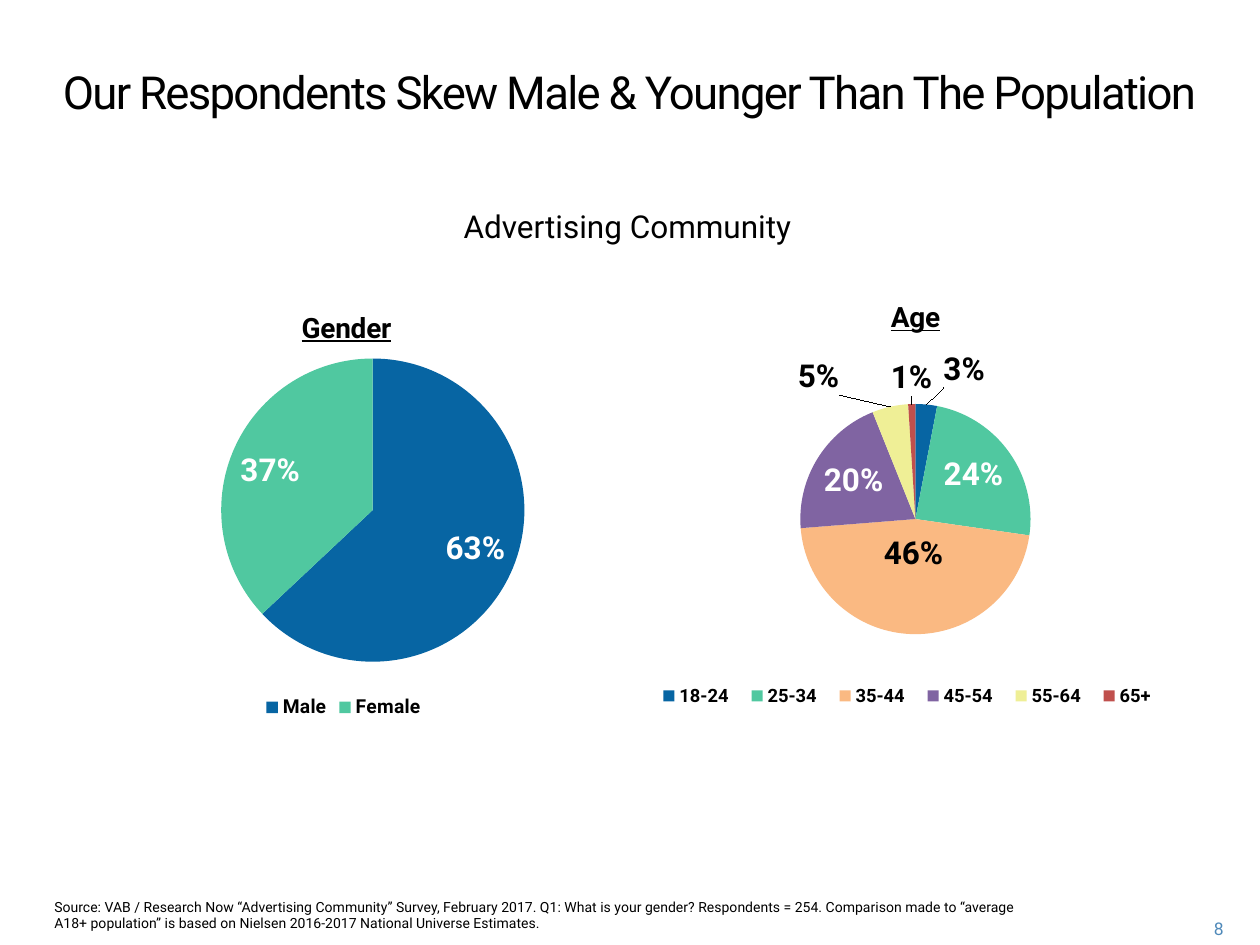
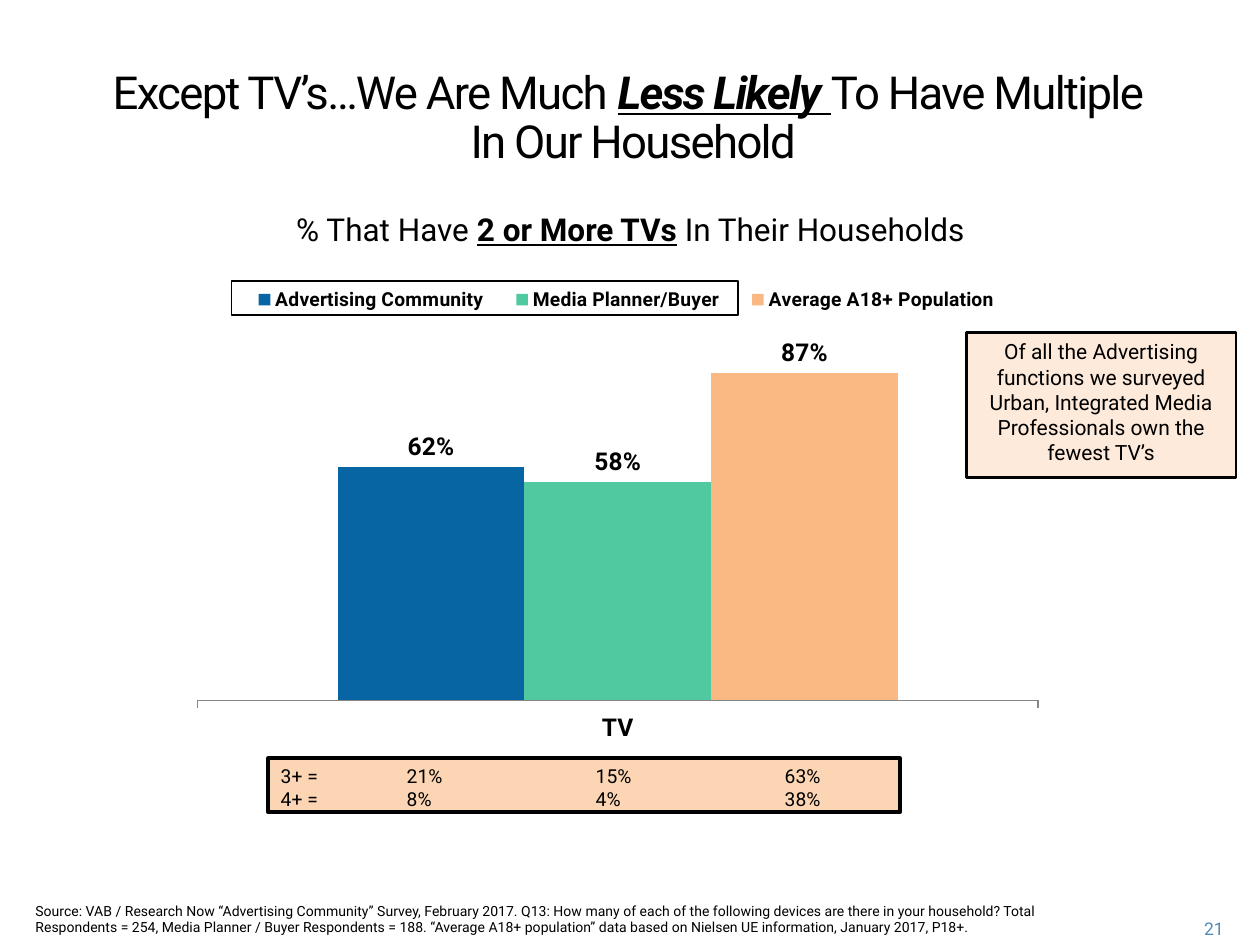
from pptx import Presentation
from pptx.chart.data import CategoryChartData
from pptx.dml.color import RGBColor
from pptx.enum import chart as charts, shapes, text
from pptx.oxml import parse_xml
from pptx.oxml.ns import nsdecls, qn
from pptx.util import Cm, Pt

FONT = "Roboto"
BLACK = RGBColor(0x00, 0x00, 0x00)
WHITE = RGBColor(0xFF, 0xFF, 0xFF)
BLUE = RGBColor(0x07, 0x65, 0xA3)
GREEN = RGBColor(0x50, 0xC8, 0xA0)
ORANGE = RGBColor(0xFA, 0xB9, 0x82)
PURPLE = RGBColor(0x80, 0x64, 0xA2)
YELLOW = RGBColor(0xEF, 0xEF, 0x96)
RED = RGBColor(0xC0, 0x50, 0x4D)
PALE_ORANGE = RGBColor(0xFD, 0xEA, 0xDA)
LIGHT_ORANGE = RGBColor(0xFC, 0xD5, 0xB5)
PAGE_BLUE = RGBColor(0x50, 0x8A, 0xBA)
AXIS_GREY = RGBColor(0x86, 0x86, 0x86)
PALETTE = [BLUE, GREEN, ORANGE, PURPLE, YELLOW, RED]

LEFT, CENTER, RIGHT = text.PP_ALIGN.LEFT, text.PP_ALIGN.CENTER, text.PP_ALIGN.RIGHT
TOP, MIDDLE = text.MSO_ANCHOR.TOP, text.MSO_ANCHOR.MIDDLE


def write(shape, box, size, runs, align=LEFT, anchor=TOP, color=BLACK):
    """Place a shape and fill its first paragraph; runs are (text, emphasised) pairs, None breaks the line."""
    shape.left, shape.top, shape.width, shape.height = [Cm(length) for length in box]
    frame = shape.text_frame
    frame.word_wrap = True
    frame.auto_size = text.MSO_AUTO_SIZE.NONE
    frame.vertical_anchor = anchor
    paragraph = frame.paragraphs[0]
    paragraph.alignment = align
    paragraph.space_before = Pt(0)
    font = paragraph.font
    font.name, font.size, font.bold = FONT, Pt(size), False
    font.color.rgb = color
    for part in runs:
        if part is None:
            paragraph.add_line_break()
            continue
        run = paragraph.add_run()
        run.text, emphasised = part
        if emphasised:
            run.font.bold = run.font.underline = True
    return paragraph


def set_layout(parent, index, mode="edge", **fractions):
    """Give a chart part a manual layout, inserted as child number index."""
    for old in parent.findall(qn("c:layout")):
        parent.remove(old)
    items = '<c:layoutTarget val="inner"/>' if parent.tag == qn("c:plotArea") else ""
    if mode == "edge":
        items += '<c:xMode val="edge"/><c:yMode val="edge"/>'
    items += "".join(f'<c:{name} val="{value}"/>' for name, value in fractions.items())
    parent.insert(index, parse_xml(
        f'<c:layout {nsdecls("c")}><c:manualLayout>{items}</c:manualLayout></c:layout>'))


presentation = Presentation()
presentation.slide_width, presentation.slide_height = Cm(25.4), Cm(19.05)
comparison_layout = presentation.slide_layouts[4]

pages = [
    dict(
        number="8",
        title=[("Our Respondents Skew Male & Younger Than The Population", False)],
        title_box=(0.46, 1.27, 24.46, 1.5),
        subtitle=[("Advertising Community", False)],
        subtitle_box=(0.46, 4.04, 24.38, 1.02),
        source="Source: VAB / Research Now “Advertising Community” Survey, February 2017. "
               "Q1: What is your gender? Respondents = 254. Comparison made to “average A18+ "
               "population” is based on Nielsen 2016-2017 National Universe Estimates.",
        source_box=(0.84, 17.98, 20.4, 0.66),
    ),
    dict(
        number="21",
        title=[("Except TV’s…We Are Much ", False), ("Less Likely ", True),
               ("To Have Multiple ", False), None, ("In Our Household", False)],
        title_box=(0.08, 1.27, 25.37, 3.56),
        subtitle=[("% That Have ", False), ("2 or More TVs", True),
                  (" In Their Households", False)],
        subtitle_box=(0.48, 4.11, 24.46, 1.02),
        source="Source: VAB / Research Now “Advertising Community” Survey, February 2017. "
               "Q13: How many of each of the following devices are there in your household? "
               "Total Respondents = 254, Media Planner / Buyer Respondents = 188. “Average A18+ "
               "population” data based on Nielsen UE information, January 2017, P18+.",
        source_box=(0.46, 18.06, 20.83, 0.99),
    ),
]

# Title, subtitle, source and page number of every slide
for page in pages:
    slide = presentation.slides.add_slide(comparison_layout)
    holders = {holder.placeholder_format.idx: holder for holder in slide.placeholders}
    title = write(holders[0], page["title_box"], 26, page["title"], CENTER)
    title.line_spacing = Pt(28)
    for run in title.runs:
        run._r.get_or_add_rPr().set("spc", "-100")
        if run.font.bold:
            run.font.italic = True
    write(holders[1], page["subtitle_box"], 18, page["subtitle"], CENTER, MIDDLE)
    write(holders[3], page["source_box"], 8, [(page["source"], False)])
    for unused in (holders[2], holders[4]):
        unused._element.getparent().remove(unused._element)
    page_number = slide.shapes.add_textbox(0, 0, 0, 0)
    write(page_number, (23.37, 18.39, 1.55, 0.64), 10, [(page["number"], False)],
          RIGHT, MIDDLE, PAGE_BLUE)

respondents_slide, households_slide = presentation.slides

# Pie charts; moved labels are point: (position, x shift, y shift)
OUTSIDE = charts.XL_LABEL_POSITION.OUTSIDE_END
pies = [
    dict(title="Gender", box=(1.02, 5.61, 11.81, 8.99), legend_size=11,
         shares={"Male": 0.63, "Female": 0.37},
         plot=dict(x=0.29, y=0.18, w=0.52, h=0.68),
         title_place=dict(x=0.42, y=0.06), legend_place=None, moved_labels={}),
    dict(title="Age", box=(12.93, 5.61, 11.05, 9.25), legend_size=10.5,
         shares={"18-24": 0.03, "25-34": 0.24, "35-44": 0.46,
                 "45-54": 0.2, "55-64": 0.05, "65+": 0.01},
         plot=dict(x=0.29, y=0.27, w=0.42, h=0.51),
         title_place=None, legend_place=dict(x=0.01, y=0.88, w=0.95, h=0.06),
         moved_labels={0: (OUTSIDE, 0.03, -0.02),
                       2: (charts.XL_LABEL_POSITION.CENTER, 0, -0.05),
                       4: (OUTSIDE, -0.09, -0.01),
                       5: (OUTSIDE, 0, 0)}),
]
for pie in pies:
    data = CategoryChartData(number_format="0%")
    data.categories = list(pie["shares"])
    data.add_series("Series 1", list(pie["shares"].values()))
    chart = respondents_slide.shapes.add_chart(
        charts.XL_CHART_TYPE.PIE, *[Cm(length) for length in pie["box"]], data).chart
    chart.font.name, chart.font.size = FONT, Pt(18)
    chart.font.color.rgb = BLACK

    chart.has_title = True
    chart.chart_title.include_in_layout = False
    heading = chart.chart_title.text_frame
    heading.text = pie["title"]
    font = heading.paragraphs[0].font
    font.name, font.size, font.bold, font.underline = FONT, Pt(16), True, True
    font.color.rgb = BLACK
    if pie["title_place"]:
        set_layout(chart.chart_title._element, 1, **pie["title_place"])

    chart.has_legend = True
    chart.legend.position = charts.XL_LEGEND_POSITION.BOTTOM
    chart.legend.include_in_layout = False
    chart.legend.font.size, chart.legend.font.bold = Pt(pie["legend_size"]), True
    if pie["legend_place"]:
        set_layout(chart.legend._element, 1, **pie["legend_place"])

    series = chart.plots[0].series[0]
    labels = series.data_labels
    labels.show_value = True
    labels.number_format, labels.number_format_is_linked = "0%", False
    labels.position = charts.XL_LABEL_POSITION.INSIDE_END
    labels.font.size, labels.font.bold = Pt(18), True
    labels.font.color.rgb = WHITE
    for index, color in zip(range(len(pie["shares"])), PALETTE):
        fill = series.points[index].format.fill
        fill.solid()
        fill.fore_color.rgb = color
    for index, (position, shift_x, shift_y) in pie["moved_labels"].items():
        label = series.points[index].data_label
        label.font.size, label.font.bold = Pt(18), True
        label.font.color.rgb = BLACK
        label.position = position
        element = chart._chartSpace.xpath(f"//c:dLbl[c:idx/@val='{index}']")[0]
        set_layout(element, 1, mode="factor", x=shift_x, y=shift_y)
    set_layout(chart._chartSpace.chart.plotArea, 0, **pie["plot"])

# Column chart of households with two or more TVs
data = CategoryChartData(number_format="0%")
data.categories = ["TV"]
for name, share in [("Advertising Community", 0.62), ("Media Planner/Buyer", 0.58),
                    ("Average A18+ Population", 0.87)]:
    data.add_series(name, [share])
chart = households_slide.shapes.add_chart(
    charts.XL_CHART_TYPE.COLUMN_CLUSTERED, Cm(3.63), Cm(5.46), Cm(17.65), Cm(9.73), data).chart
chart.has_title = False
chart.font.name, chart.font.size, chart.font.bold = FONT, Pt(14), True
chart.font.color.rgb = BLACK
chart.has_legend = True
chart.legend.position = charts.XL_LEGEND_POSITION.TOP
chart.legend.include_in_layout = False
chart.legend.font.size, chart.legend.font.bold = Pt(11), True
set_layout(chart.legend._element, 1, x=0.06, y=0.03, w=0.9, h=0.06)
set_layout(chart._chartSpace.chart.plotArea, 0, x=0.02, y=0.11, w=0.96, h=0.78)
chart.value_axis.visible = False
chart.value_axis.has_major_gridlines = False
chart.value_axis.minimum_scale, chart.value_axis.maximum_scale = 0, 1
chart.category_axis.major_tick_mark = charts.XL_TICK_MARK.OUTSIDE
chart.category_axis.format.line.color.rgb = AXIS_GREY
plot = chart.plots[0]
plot.gap_width, plot.overlap, plot.vary_by_categories = 150, 0, False
for series, color in zip(plot.series, PALETTE):
    series.format.fill.solid()
    series.format.fill.fore_color.rgb = color
    labels = series.data_labels
    labels.show_value = True
    labels.number_format, labels.number_format_is_linked = "0%", False
    labels.position = OUTSIDE

# Boxes: 3+ and 4+ figures, frame round two legend entries, callout
figures, legend_frame, callout = [
    households_slide.shapes.add_shape(shapes.MSO_SHAPE.RECTANGLE, 0, 0, 0, 0) for _ in range(3)]
for shape, fill_color, line_width in [(figures, LIGHT_ORANGE, 2.25), (legend_frame, None, 1),
                                      (callout, PALE_ORANGE, 1.5)]:
    shape.shadow.inherit = False
    shape.line.color.rgb = BLACK
    shape.line.width = Pt(line_width)
    if fill_color is None:
        shape.fill.background()
    else:
        shape.fill.solid()
        shape.fill.fore_color.rgb = fill_color

legend_frame.left, legend_frame.top = Cm(4.67), Cm(5.66)
legend_frame.width, legend_frame.height = Cm(10.21), Cm(0.69)
write(callout, (19.48, 6.71, 5.44, 2.92), 12,
      [("Of all the Advertising functions we surveyed Urban, Integrated Media "
        "Professionals own the fewest TV’s", False)], CENTER)

figures.text_frame.add_paragraph()
rows = ["3+ =\t21%\t15%\t63%", "4+ =\t8%\t4%\t38%"]
for paragraph, row in zip(figures.text_frame.paragraphs, rows):
    stops = "".join(f'<a:tab pos="{Cm(stop)}" algn="l"/>' for stop in (2.54, 6.35, 10.16))
    paragraph._p.get_or_add_pPr().append(
        parse_xml(f'<a:tabLst {nsdecls("a")}>{stops}</a:tabLst>'))
    paragraph.alignment = LEFT
    paragraph.font.name, paragraph.font.size = FONT, Pt(11)
    paragraph.font.color.rgb = BLACK
    paragraph.add_run().text = row
write(figures, (5.41, 15.29, 12.73, 1.09), 11, [])

presentation.save("out.pptx")
